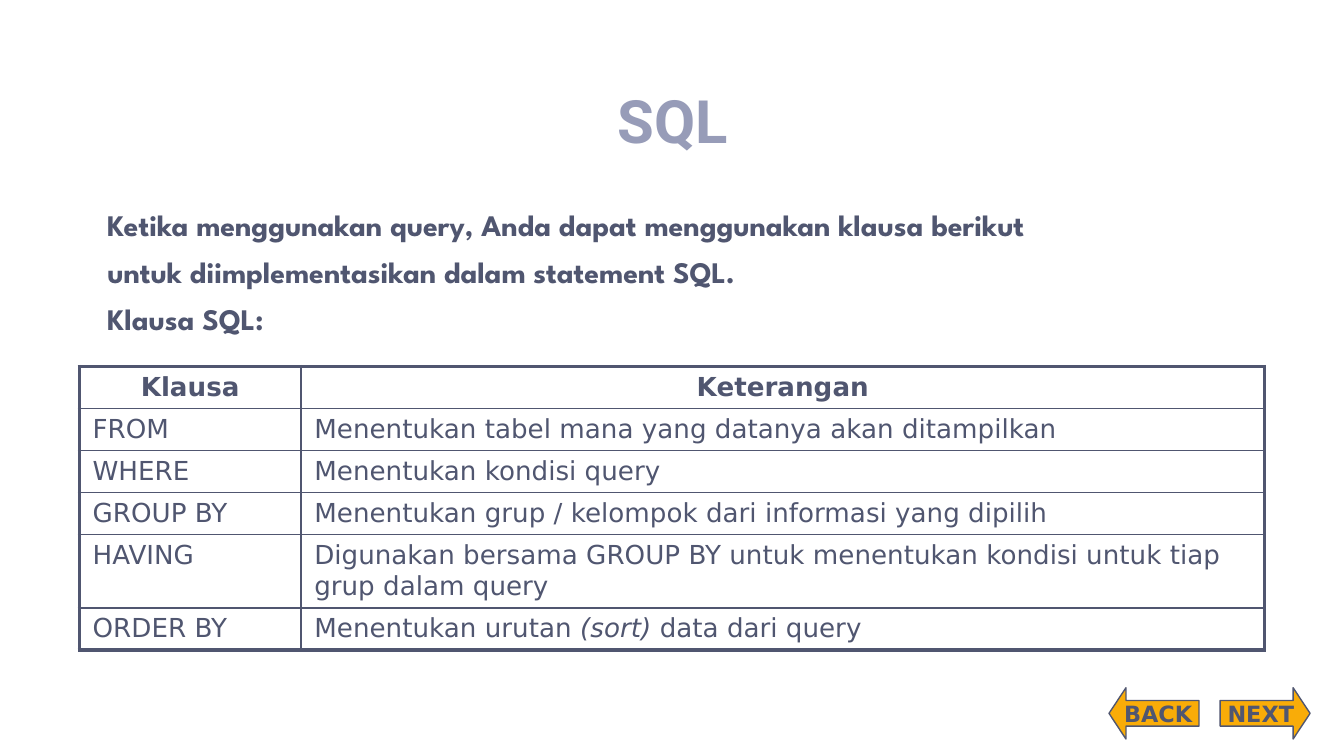
from lxml import etree
from pptx import Presentation
from pptx.dml.color import RGBColor
from pptx.enum.shapes import MSO_SHAPE
from pptx.enum.text import MSO_ANCHOR, PP_ALIGN
from pptx.oxml import parse_xml
from pptx.oxml.ns import nsdecls
from pptx.util import Cm, Pt

LEFT, CENTER = PP_ALIGN.LEFT, PP_ALIGN.CENTER
TOP, MIDDLE, BOTTOM = MSO_ANCHOR.TOP, MSO_ANCHOR.MIDDLE, MSO_ANCHOR.BOTTOM
INK, TITLE, ORANGE = "505670", "979CB8", "F9AC08"
THIN, THICK = Pt(1), Pt(2.25)


def rgb(color):
    return RGBColor.from_string(color)


def write(p, text, size=14, font="DejaVu Sans", color=INK, bold=False,
          italic=False, align=LEFT):
    p.alignment = align
    r = p.add_run()
    r.text = text
    r.font.name, r.font.size = font, Pt(size)
    r.font.bold, r.font.italic = bold, italic
    r.font.color.rgb = rgb(color)


prs = Presentation()
prs.slide_width, prs.slide_height = Cm(25.4), Cm(14.29)
s = prs.slides.add_slide(prs.slide_layouts[6])

# Title and introduction
frames = []
for x, y, w, h, anchor in ((1.6, 0.64, 22.23, 2.54, BOTTOM),
                           (1.58, 3.66, 22.94, 8.89, TOP)):
    tf = s.shapes.add_textbox(Cm(x), Cm(y), Cm(w), Cm(h)).text_frame
    tf.word_wrap = True
    tf.vertical_anchor = anchor
    tf.margin_left = tf.margin_right = tf.margin_top = tf.margin_bottom = Cm(0.25)
    frames.append(tf)
title, intro = frames
write(title.paragraphs[0], "SQL", size=32, font="Roboto", color=TITLE,
      bold=True, align=CENTER)

lines = ("Ketika menggunakan query, Anda dapat menggunakan klausa berikut",
         "untuk diimplementasikan dalam statement SQL.",
         "Klausa SQL:")
for i, line in enumerate(lines):
    p = intro.add_paragraph() if i else intro.paragraphs[0]
    p.space_before = Pt(6 if i else 0)
    p.line_spacing = Pt(19.2)
    pPr = p._p.get_or_add_pPr()
    pPr.set("marL", str(Cm(1.27)))
    pPr.set("indent", str(Cm(-1.07)))
    write(p, line, size=16, font="League Spartan", bold=True)

# Navigation arrows
for text, x, kind in (("NEXT", 23.06, MSO_SHAPE.RIGHT_ARROW),
                      ("BACK", 20.96, MSO_SHAPE.LEFT_ARROW)):
    sp = s.shapes.add_shape(kind, Cm(x), Cm(13), Cm(1.7), Cm(0.97))
    sp.adjustments[0], sp.adjustments[1] = 0.5, 0.33
    sp.shadow.inherit = False
    sp.fill.solid()
    sp.fill.fore_color.rgb = rgb(ORANGE)
    sp.line.color.rgb = rgb(INK)
    sp.line.width = Pt(0.75)
    tf = sp.text_frame
    tf.word_wrap = False
    tf.vertical_anchor = MIDDLE
    write(tf.paragraphs[0], text, size=12, bold=True, align=CENTER)

# Table of clauses; odd parts of a split description are italic
rows = (
    ("Klausa", ["Keterangan"]),
    ("FROM", ["Menentukan tabel mana yang datanya akan ditampilkan"]),
    ("WHERE", ["Menentukan kondisi query"]),
    ("GROUP BY", ["Menentukan grup / kelompok dari informasi yang dipilih"]),
    ("HAVING", ["Digunakan bersama GROUP BY untuk menentukan kondisi "
                "untuk tiap grup dalam query"]),
    ("ORDER BY", ["Menentukan urutan ", "(sort) ", "data dari query"]),
)
last = len(rows) - 1
table = s.shapes.add_table(len(rows), 2, Cm(1.5), Cm(6.93), Cm(22.4),
                           Cm(5.28)).table
table.first_row = table.horz_banding = False
table.columns[0].width, table.columns[1].width = Cm(4.19), Cm(18.21)
for i, (clause, description) in enumerate(rows):
    table.rows[i].height = Cm(1.33 if clause == "HAVING" else 0.77)
    for j, parts in enumerate(([clause], description)):
        cell = table.cell(i, j)
        cell.margin_left = cell.margin_right = Cm(0.25)
        cell.margin_top = cell.margin_bottom = Cm(0.1)
        cell.fill.background()
        for k, part in enumerate(parts):
            write(cell.text_frame.paragraphs[0], part, bold=i == 0,
                  italic=k % 2 == 1, align=LEFT if i else CENTER)
        outer = (("lnL", j == 0), ("lnR", j == 1),
                 ("lnT", i == 0), ("lnB", i == last))
        for n, (side, thick) in enumerate(outer):
            ln = parse_xml(f'<a:{side} {nsdecls("a")} w="{THICK if thick else THIN}"/>')
            fill = etree.SubElement(ln, ln.tag.replace(side, "solidFill"))
            etree.SubElement(fill, ln.tag.replace(side, "srgbClr"), val=INK)
            cell._tc.get_or_add_tcPr().insert(n, ln)

prs.save("out.pptx")
